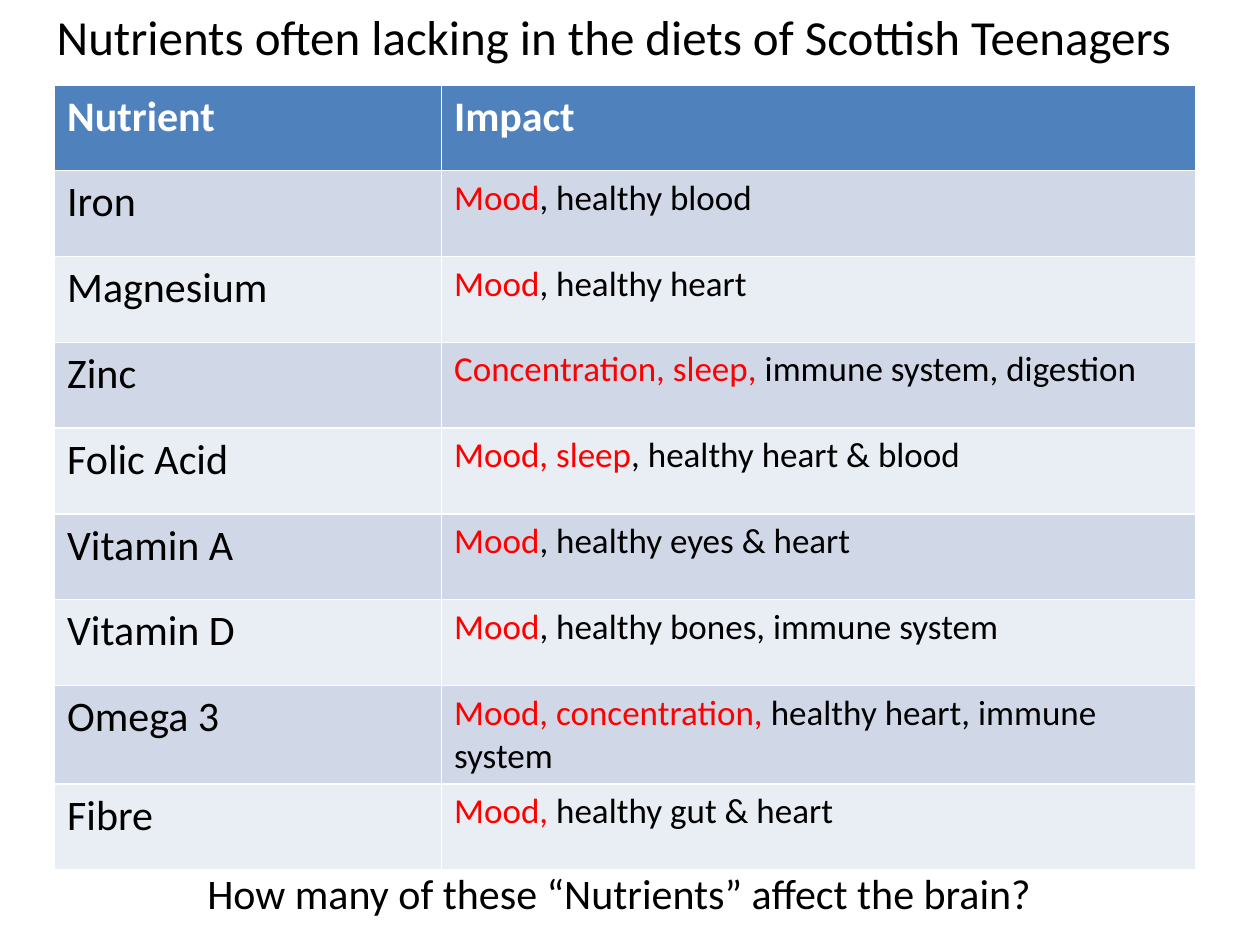
from pptx import Presentation
from pptx import util as u
from pptx.dml.color import RGBColor
from pptx.enum import text


def rgb(color):
    return RGBColor.from_string(color)


def format_run(r, size, color, bold=False):
    r.font.name = "Calibri"
    r.font.size = u.Pt(size)
    r.font.bold = bold
    r.font.color.rgb = rgb(color)


prs = Presentation()
prs.slide_width, prs.slide_height = u.Cm(25.4), u.Cm(19.05)
s = prs.slides.add_slide(prs.slide_layouts[5])

# Title
title = s.shapes.title
title.left, title.top, title.width, title.height = u.Cm(0.89), u.Cm(0), u.Cm(23.19), u.Cm(1.45)
tf = title.text_frame
tf.text = "Nutrients often lacking in the diets of Scottish Teenagers"
tf.auto_size = text.MSO_AUTO_SIZE.NONE
tf.vertical_anchor = text.MSO_ANCHOR.TOP
p = tf.paragraphs[0]
p.alignment = text.PP_ALIGN.LEFT
format_run(p.runs[0], 28, "000000")

# Nutrient, effects on the brain (red), other effects (black)
nutrients = [
    ("Iron", "Mood", ", healthy blood"),
    ("Magnesium", "Mood", ", healthy heart"),
    ("Zinc", "Concentration, sleep, ", "immune system, digestion"),
    ("Folic Acid", "Mood, sleep", ", healthy heart & blood"),
    ("Vitamin A", "Mood", ", healthy eyes & heart"),
    ("Vitamin D", "Mood", ", healthy bones, immune system"),
    ("Omega 3", "Mood, concentration,", " healthy heart, immune system"),
    ("Fibre", "Mood,", " healthy gut & heart"),
]

# Table; its default style supplies the white rules
row_height = u.Cm(1.73)
row_count = len(nutrients) + 1
table = s.shapes.add_table(row_count, 2, u.Cm(1.1), u.Cm(1.71),
                           u.Cm(23), row_height * row_count).table
table.columns[0].width, table.columns[1].width = u.Cm(7.8), u.Cm(15.2)
for row in table.rows:
    row.height = row_height

# Header row
for cell, heading in zip(table.rows[0].cells, ("Nutrient", "Impact")):
    cell.fill.solid()
    cell.fill.fore_color.rgb = rgb("4F81BD")
    cell.text_frame.text = heading
    format_run(cell.text_frame.paragraphs[0].runs[0], 24, "FFFFFF", True)

# Nutrient rows with alternating bands
for i, (nutrient, brain, other) in enumerate(nutrients, 1):
    parts = [[(nutrient, 24, "000000")],
             [(brain, 20, "FF0000"), (other, 20, "000000")]]
    for cell, runs in zip(table.rows[i].cells, parts):
        cell.fill.solid()
        cell.fill.fore_color.rgb = rgb("D0D8E8" if i % 2 else "E9EDF4")
        for words, size, color in runs:
            r = cell.text_frame.paragraphs[0].add_run()
            r.text = words
            format_run(r, size, color)

# Closing question
question = s.shapes.add_textbox(u.Cm(0.89), u.Cm(17.37), u.Cm(23.19), u.Cm(1.28))
tf = question.text_frame
tf.word_wrap = True
tf.auto_size = text.MSO_AUTO_SIZE.SHAPE_TO_FIT_TEXT
tf.text = "How many of these “Nutrients” affect the brain?"
p = tf.paragraphs[0]
p.alignment = text.PP_ALIGN.CENTER
format_run(p.runs[0], 24, "000000")

prs.save("out.pptx")
